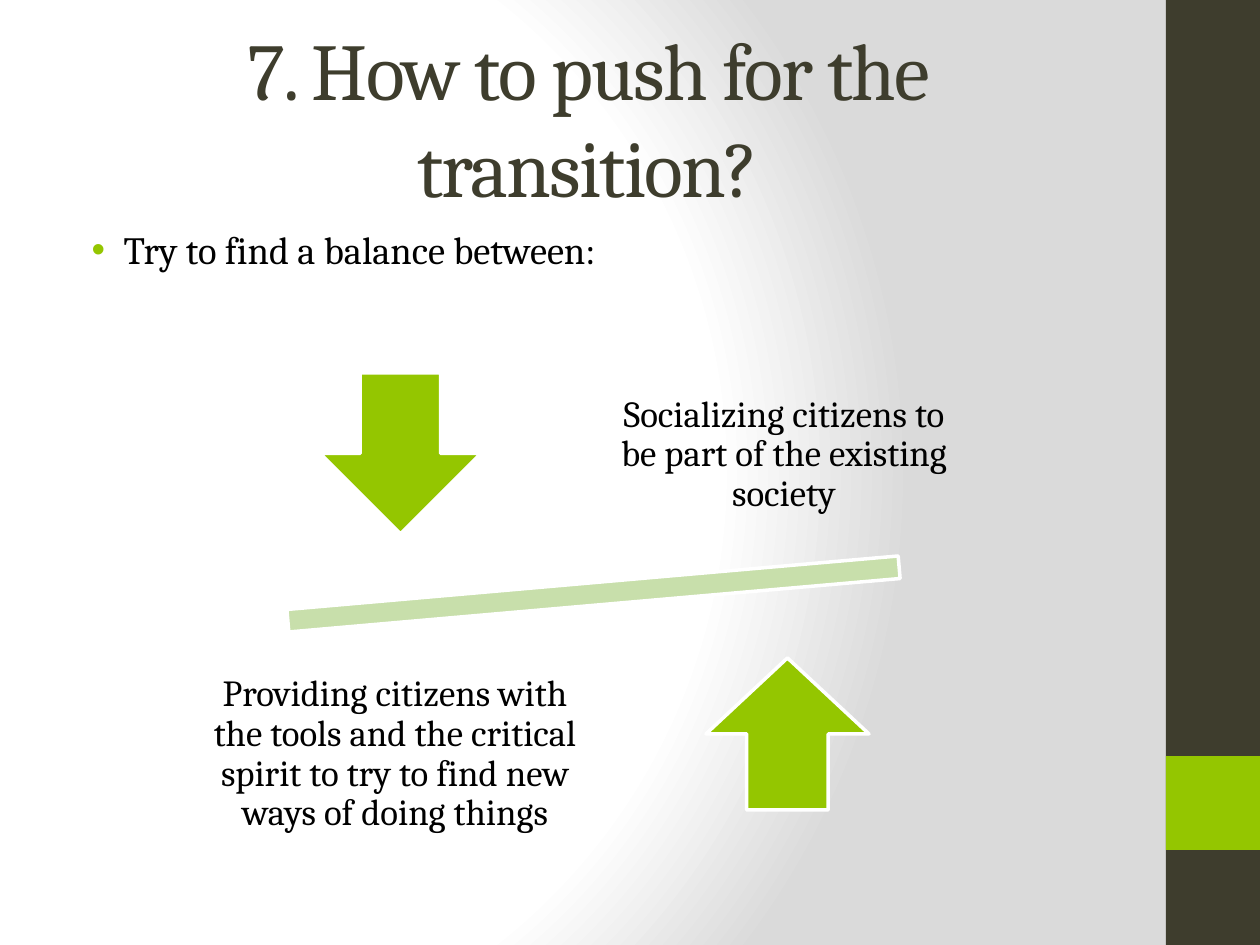
from pptx import Presentation
from pptx.dml.color import RGBColor
from pptx.enum.shapes import MSO_SHAPE
from pptx.enum.text import MSO_ANCHOR, MSO_AUTO_SIZE, PP_ALIGN
from pptx.oxml import parse_xml
from pptx.oxml.ns import nsdecls
from pptx.util import Pt

EMU_PER_PX = 914400 / 126
DARK, GREEN, PALE, WHITE, BLACK = "3E3D2D", "94C600", "C8DFAB", "FFFFFF", "000000"


def px(n):
    return round(n * EMU_PER_PX)


def rgb(value):
    return RGBColor.from_string(value)


class Deck:
    """Holds the style and the current slide, and adds elements to it."""

    font = "Cambria"

    def __init__(self, width, height):
        self.prs = Presentation()
        self.prs.slide_width, self.prs.slide_height = px(width), px(height)

    def slide(self):
        self.s = self.prs.slides.add_slide(self.prs.slide_layouts[1])

    def background(self, stops):
        gs = "".join(
            f'<a:gs pos="{pos * 1000}"><a:srgbClr val="{color}"/></a:gs>'
            for pos, color in stops
        )
        bg = parse_xml(
            f'<p:bg {nsdecls("p", "a")}><p:bgPr><a:gradFill rotWithShape="1">'
            f'<a:gsLst>{gs}</a:gsLst><a:path path="circle">'
            '<a:fillToRect l="20000" t="50000" r="100000" b="50000"/></a:path>'
            '</a:gradFill><a:effectLst/></p:bgPr></p:bg>'
        )
        self.s.element.cSld.insert(0, bg)

    def fill_text(self, sp, text, size, color, align, anchor):
        tf = sp.text_frame
        tf.word_wrap = True
        tf.auto_size = MSO_AUTO_SIZE.NONE
        tf.vertical_anchor = anchor
        tf.text = text
        p = tf.paragraphs[0]
        p.alignment = align
        r = p.runs[0]
        r.font.name, r.font.size = self.font, Pt(size)
        r.font.color.rgb = rgb(color)
        return p

    def place(self, sp, x, y, w, h):
        sp.left, sp.top, sp.width, sp.height = px(x), px(y), px(w), px(h)

    def title(self, text, x, y, w, h):
        sp = self.s.shapes.title
        self.place(sp, x, y, w, h)
        p = self.fill_text(sp, text, 46, DARK, PP_ALIGN.CENTER, MSO_ANCHOR.MIDDLE)
        p.runs[0].font._element.set("spc", "-100")

    def bullet(self, text, x, y, w, h):
        sp = self.s.placeholders[1]
        self.place(sp, x, y, w, h)
        p = self.fill_text(sp, text, 22, BLACK, PP_ALIGN.LEFT, MSO_ANCHOR.TOP)
        p.space_before = Pt(4.4)
        pPr = p._p.get_or_add_pPr()
        pPr.set("marL", str(px(48)))
        pPr.set("indent", str(px(-32)))
        for xml in (
            f'<a:buClr {nsdecls("a")}><a:srgbClr val="{GREEN}"/></a:buClr>',
            f'<a:buFont {nsdecls("a")} typeface="Arial"/>',
            f'<a:buChar {nsdecls("a")} char="•"/>',
        ):
            pPr.append(parse_xml(xml))

    def shape(self, kind, x, y, w, h, fill, line=None, rotation=0):
        sp = self.s.shapes.add_shape(kind, px(x), px(y), px(w), px(h))
        sp.shadow.inherit = False
        sp.rotation = rotation
        sp.fill.solid()
        sp.fill.fore_color.rgb = rgb(fill)
        if line:
            sp.line.color.rgb = rgb(line)
            sp.line.width = Pt(2)
        else:
            sp.line.fill.background()

    def label(self, text, x, y, w, h):
        sp = self.s.shapes.add_textbox(px(x), px(y), px(w), px(h))
        p = self.fill_text(sp, text, 21, BLACK, PP_ALIGN.CENTER, MSO_ANCHOR.MIDDLE)
        p.line_spacing = 0.9
        tf = sp.text_frame
        tf.margin_left = tf.margin_right = tf.margin_top = tf.margin_bottom = px(20)


def main():
    d = Deck(1260, 945)
    d.slide()
    d.background([(0, WHITE), (75, WHITE), (100, "DADADA")])
    d.shape(MSO_SHAPE.RECTANGLE, 1166, 0, 94, 945, DARK)
    d.shape(MSO_SHAPE.RECTANGLE, 1166, 756, 94, 94, GREEN)
    d.title("7. How to push for the transition?", 63, 38, 1050, 158)
    d.bullet("Try to find a balance between:", 63, 220, 1050, 662)
    d.shape(MSO_SHAPE.MATH_MINUS, 176, 546, 835, 96, PALE, WHITE, 355)
    d.shape(MSO_SHAPE.DOWN_ARROW, 320, 373, 161, 161, GREEN, WHITE)
    d.label("Socializing citizens to be part of the existing society",
            590, 354, 388, 202)
    d.shape(MSO_SHAPE.UP_ARROW, 706, 658, 163, 152, GREEN, WHITE)
    d.label("Providing citizens with the tools and the critical spirit to try "
            "to find new ways of doing things", 184, 651, 422, 207)
    d.prs.save("out.pptx")


if __name__ == "__main__":
    main()
